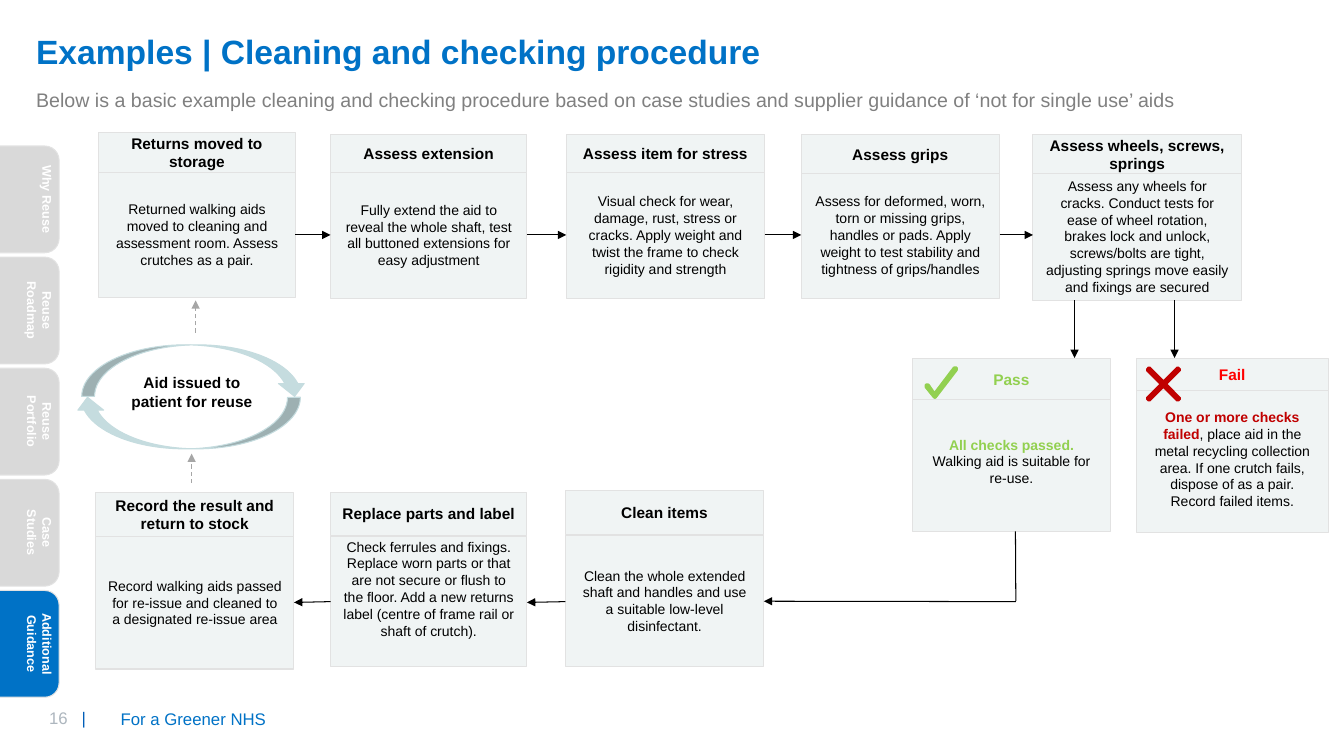
from lxml.etree import SubElement
from pptx import Presentation
from pptx.dml.color import RGBColor
from pptx.enum.dml import MSO_LINE_DASH_STYLE as Dash
from pptx.enum.shapes import MSO_CONNECTOR as Link, MSO_SHAPE as Preset
from pptx.enum.text import MSO_ANCHOR as Anchor, PP_ALIGN as Align
from pptx.oxml.ns import qn
from pptx.util import Cm, Pt

BLUE, BLACK, WHITE, GREEN, RED = "0072C6", "000000", "FFFFFF", "92D050", "C00000"
PANEL, EDGE, TAB, CYCLE = "F0F4F4", "E2E2E2", "D9D9D9", "C5DCDF"


def color(value):
    return RGBColor.from_string(value)


class Slide:
    font = "Arial"
    line_width = 0.75

    def __init__(self, page):
        self.page = page

    def put_text(self, shape, spans, size, insets, anchor=Anchor.TOP, align=Align.LEFT):
        """Fill a shape with one paragraph of (text, color, bold) spans."""
        frame = shape.text_frame
        sides = ("margin_left", "margin_top", "margin_right", "margin_bottom")
        settings = dict(zip(sides, map(Cm, insets)), word_wrap=True, vertical_anchor=anchor)
        for name, value in settings.items():
            setattr(frame, name, value)
        para = frame.paragraphs[0]
        para.alignment = align
        for text, hue, bold in spans:
            span = para.add_run()
            span.text = text
            for name, value in {"name": self.font, "size": Pt(size), "bold": bold}.items():
                setattr(span.font, name, value)
            span.font.color.rgb = color(hue)
        return para

    def text(self, place, spans, size, insets=(0.25, 0.13, 0.25, 0.13), anchor=Anchor.TOP):
        box = self.page.shapes.add_textbox(*map(Cm, place))
        return self.put_text(box, spans, size, insets, anchor)

    def paint(self, shape, fill, edge, width=line_width):
        shape.shadow.inherit = False
        shape.fill.solid()
        shape.fill.fore_color.rgb = color(fill)
        shape.line.color.rgb = color(edge)
        shape.line.width = Pt(width)

    def shape(self, preset, place, fill, edge):
        shape = self.page.shapes.add_shape(preset, *map(Cm, place))
        self.paint(shape, fill, edge)
        return shape

    def panel(self, place, spans, size, insets=(0.3,) * 4):
        panel = self.shape(Preset.RECTANGLE, place, PANEL, EDGE)
        self.put_text(panel, spans, size, insets, Anchor.MIDDLE, Align.CENTER)

    def card(self, left, width, head, body, title, spans, hue=BLACK, **options):
        """Draw a step; head and body are (top, height)."""
        self.panel((left, body[0], width, body[1]), spans, 10, **options)
        self.panel((left, head[0], width, head[1]), [(title, hue, True)], 11)

    def tab(self, top, label, fill):
        tab = self.shape(Preset.ROUNDED_RECTANGLE, (-0.51, top, 2, 2.69), fill, EDGE)
        tab.adjustments[0] = 0.18
        self.put_text(tab, [(label, WHITE, True)], 9, (0, 0.25, 0, 0.25), align=Align.CENTER)
        tab.text_frame._txBody.bodyPr.set("vert", "vert")

    def arrow(self, start, end, hue=BLACK, dash=None, head=True):
        link = self.page.shapes.add_connector(Link.STRAIGHT, *map(Cm, start + end))
        link.line.color.rgb = color(hue)
        link.line.width = Pt(self.line_width)
        if dash:
            link.line.dash_style = dash
        if head:
            SubElement(link.line._get_or_add_ln(), qn("a:tailEnd"), type="triangle")
        SubElement(link._element.spPr, qn("a:effectLst"))

    def mark(self, points, hue):
        """Draw a closed outline from points in hundredths of a centimetre."""
        builder = self.page.shapes.build_freeform(*points[0], scale=Cm(0.01))
        builder.add_line_segments(points[1:], close=True)
        self.paint(builder.convert_to_shape(), hue, hue, 2.25)

    def ring(self):
        center = self.page.shapes.add_shape(Preset.OVAL, *map(Cm, (2.21, 8.81, 5.26, 2.36)))
        center.shadow.inherit = False
        center.fill.background()
        center.line.fill.background()
        self.put_text(center, [("Aid issued to patient for reuse", BLACK, True)], 11,
                      (0.25,) * 4, align=Align.CENTER)
        for left, top, turn in ((2.06, 8.69, 0), (1.88, 10.01, 180)):
            half = self.shape(Preset.CURVED_DOWN_ARROW, (left, top, 5.69, 1.3), CYCLE, CYCLE)
            half.rotation = turn


def plain(text):
    return [(text, BLACK, False)]


def main():
    deck = Presentation()
    deck.slide_width, deck.slide_height = Cm(33.87), Cm(19.05)
    slide = Slide(deck.slides.add_slide(deck.slide_layouts[6]))

    slide.text((2.79, 17.6, 19.56, 1.02), [("For a Greener NHS", BLUE, False)], 12,
               anchor=Anchor.MIDDLE)
    number = slide.text((0.99, 17.7, 2.21, 0.76),
                        [("16\t", "ADB6BE", False), ("|", "005EB8", False)], 12)
    stops = SubElement(number._p.get_or_add_pPr(), qn("a:tabLst"))
    SubElement(stops, qn("a:tab"), pos=str(Cm(0.82)), algn="l")
    flush = (0, 0.13, 0, 0.13)
    slide.text((0.91, 0.64, 27.69, 2.31),
               [("Examples | Cleaning and checking procedure", BLUE, True)], 24, flush)
    slide.text((0.91, 2.08, 29.18, 0.94),
               [("Below is a basic example cleaning and checking procedure based on case "
                 "studies and supplier guidance of ‘not for single use’ aids", "808080", False)],
               14, flush)

    slide.ring()

    checks = [
        (2.49, 4.95, (3.35, 0.99), (4.32, 3.18), "Returns moved to storage",
         "Returned walking aids moved to cleaning and assessment room. "
         "Assess crutches as a pair."),
        (8.33, 4.95, (3.38, 0.97), (4.32, 3.2), "Assess extension",
         "Fully extend the aid to reveal the whole shaft, test all buttoned extensions "
         "for easy adjustment"),
        (14.27, 5, (3.38, 0.97), (4.32, 3.2), "Assess item for stress",
         "Visual check for wear, damage, rust, stress or cracks. Apply weight and twist "
         "the frame to check rigidity and strength"),
        (20.19, 5, (3.4, 0.97), (4.32, 3.2), "Assess grips",
         "Assess for deformed, worn, torn or missing grips, handles or pads. Apply weight "
         "to test stability and tightness of grips/handles"),
        (26.03, 5.26, (3.4, 0.97), (4.34, 3.23), "Assess wheels, screws, springs",
         "Assess any wheels for cracks. Conduct tests for ease of wheel rotation, brakes "
         "lock and unlock, screws/bolts are tight, adjusting springs move easily and "
         "fixings are secured"),
    ]
    returns = [
        (14.25, 5, (12.37, 1.09), (13.49, 3.3), "Clean items",
         "Clean the whole extended shaft and handles and use a suitable low-level "
         "disinfectant."),
        (8.33, 4.95, (12.4, 1.09), (13.51, 3.28), "Replace parts and label",
         "Check ferrules and fixings. Replace worn parts or that are not secure or flush to "
         "the floor. Add a new returns label (centre of frame rail or shaft of crutch)."),
        (2.41, 5, (12.42, 1.09), (13.51, 3.35), "Record the result and return to stock",
         "Record walking aids passed for re-issue and cleaned to a designated re-issue area"),
    ]
    raised = {"Replace parts and label": {"insets": (0.3, 0, 0.3, 0.64)}}
    for *layout, title, text in checks + returns:
        slide.card(*layout, title, plain(text), **raised.get(title, {}))

    slide.card(22.99, 5, (9.04, 1.02), (9.86, 3.53), "Pass",
               [("All checks passed. ", GREEN, True),
                ("Walking aid is suitable for re-use.", BLACK, False)], GREEN)
    slide.card(28.63, 4.85, (9.04, 0.79), (9.73, 3.68), "Fail",
               [("One or more checks failed", RED, True),
                (", place aid in the metal recycling collection area. If one crutch fails, "
                 "dispose of as a pair. Record failed items.", BLACK, False)], "FF0000")

    slide.mark([(2410, 927), (2405, 927), (2355, 993), (2339, 970), (2334, 970),
                (2334, 975), (2355, 1001), (2357, 1001), (2410, 932)], GREEN)
    arm = [(0, -5), (36, -41), (41, -36)]
    cross = []
    for _ in range(4):
        cross += [(2932 + x, 968 + y) for x, y in arm]
        arm = [(-y, x) for x, y in arm]
    slide.mark(cross, RED)

    for step, following in zip(checks, checks[1:]):
        slide.arrow((step[0] + step[1], 5.92), (following[0], 5.92))
    for step, following in zip(returns, returns[1:]):
        slide.arrow((step[0], 15.16), (following[0] + following[1], 15.18))
    for x in (27.08, 29.6):
        slide.arrow((x, 7.57), (x, 9.02))
    for x, bottom, top in ((4.93, 8.38, 7.57), (4.83, 12.17, 11.43)):
        slide.arrow((x, bottom), (x, top), "A6A6A6", Dash.DASH)
    slide.arrow((25.59, 13.39), (25.6, 15.15), head=False)
    slide.arrow((25.6, 15.16), (19.25, 15.15))

    labels = ["Why Reuse", "Reuse Roadmap", "Reuse Portfolio", "Case Studies",
              "Additional Guidance"]
    for index, label in enumerate(labels):
        current = label == labels[-1]
        slide.tab(3.68 + 2.8 * index, label, BLUE if current else TAB)

    deck.save("out.pptx")


if __name__ == "__main__":
    main()
